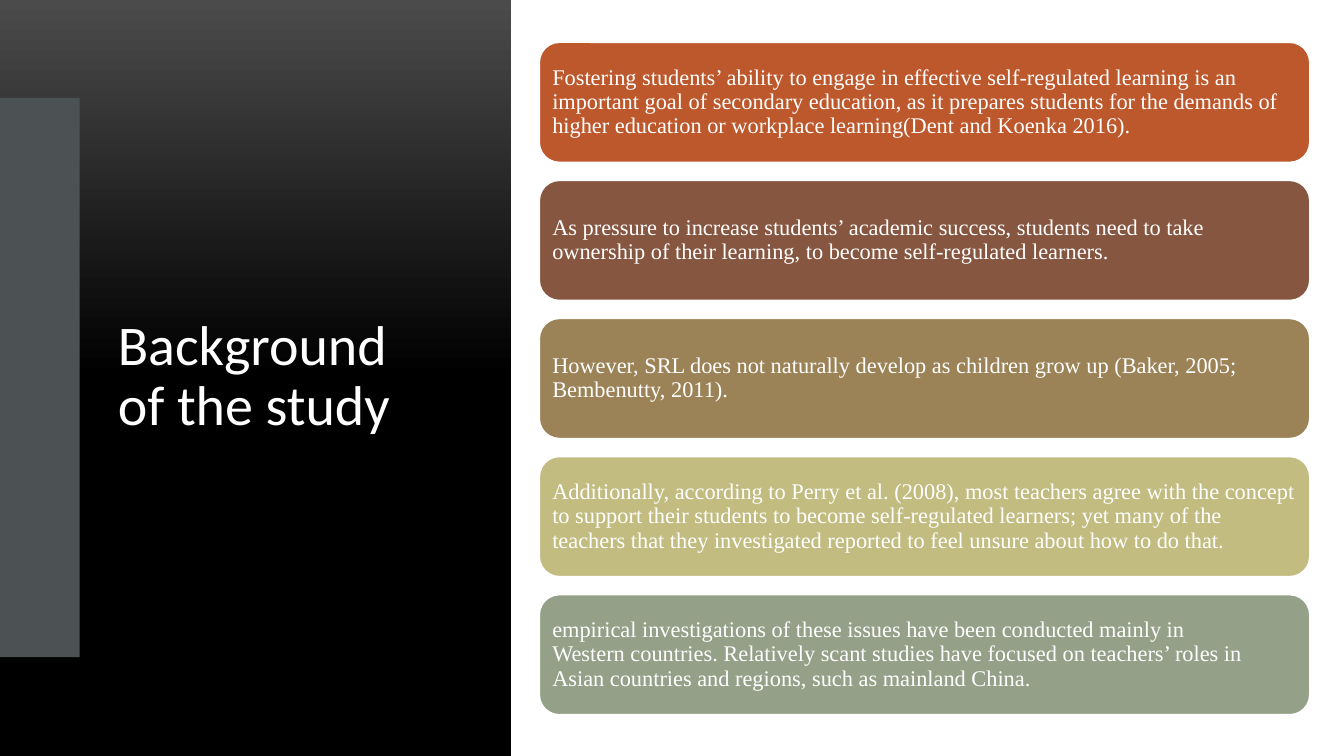
from copy import deepcopy
from dataclasses import dataclass

from pptx import Presentation
from pptx.dml.color import RGBColor
from pptx.enum.shapes import MSO_SHAPE
from pptx.enum.text import MSO_ANCHOR, PP_ALIGN
from pptx.oxml.ns import qn
from pptx.util import Inches, Pt

COLORS = {
    "white": "FFFFFF",
    "charcoal": "4B4B4B",
    "black": "000000",
    "slate": "4C5254",
    "rust": "BD582C",
    "brown": "865640",
    "tan": "9B8357",
    "olive": "C2BC80",
    "sage": "94A088",
}
CARD_LEFT, CARD_TOP = 5.35, 0.42
CARD_WIDTH, CARD_HEIGHT = 7.64, 1.19
CARD_STEP = 1.37
CARD_INSET = 0.07


@dataclass
class Card:
    color: str
    lines: tuple[str, ...]


CARDS = [
    Card("rust", (
        "Fostering students’ ability to engage in effective self-regulated learning is an "
        "important goal of secondary education, as it prepares students for the demands of "
        "higher education or workplace learning(Dent and Koenka 2016).",
    )),
    Card("brown", (
        "As pressure to increase students’ academic success, students need to take "
        "ownership of their learning, to become self-regulated learners.",
    )),
    Card("tan", (
        "However, SRL does not naturally develop as children grow up (Baker, 2005; "
        "Bembenutty, 2011).",
    )),
    Card("olive", (
        "Additionally, according to Perry et al. (2008), most teachers agree with the concept "
        "to support their students to become self-regulated learners; yet many of the "
        "teachers that they investigated reported to feel unsure about how to do that.",
    )),
    Card("sage", (
        "empirical investigations of these issues have been conducted mainly in",
        "Western countries. Relatively scant studies have focused on teachers’ roles in "
        "Asian countries and regions, such as mainland China.",
    )),
]


def rgb(name: str) -> RGBColor:
    return RGBColor.from_string(COLORS[name])


def add_block(s, kind: MSO_SHAPE, left: float, top: float, width: float, height: float,
              color: str):
    sp = s.shapes.add_shape(kind, Inches(left), Inches(top), Inches(width), Inches(height))
    sp.shadow.inherit = False
    sp.fill.solid()
    sp.fill.fore_color.rgb = rgb(color)
    sp.line.fill.background()
    return sp


def write_text(sp, lines: tuple[str, ...], font: str, size: float) -> None:
    tf = sp.text_frame
    tf.word_wrap = True
    tf.vertical_anchor = MSO_ANCHOR.MIDDLE
    p = tf.paragraphs[0]
    p.alignment = PP_ALIGN.LEFT
    p.line_spacing = 0.9
    for i, line in enumerate(lines):
        if i:
            p.add_line_break()
        r = p.add_run()
        r.text = line
        r.font.name = font
        r.font.size = Pt(size)
        r.font.color.rgb = rgb("white")


def add_panel(s) -> None:
    sp = add_block(s, MSO_SHAPE.RECTANGLE, 0, 0, 5.07, 7.5, "black")
    sp.fill.gradient()
    sp.fill.gradient_angle = 270
    top, middle = sp.fill.gradient_stops
    top.position, top.color.rgb = 0, rgb("charcoal")
    middle.position, middle.color.rgb = 0.5, rgb("black")
    stops = sp._element.spPr.find(qn("a:gradFill")).find(qn("a:gsLst"))
    stops.append(deepcopy(stops[-1]))
    sp.fill.gradient_stops[2].position = 1


def add_title(s) -> None:
    sp = s.shapes.add_textbox(Inches(1.07), Inches(0.97), Inches(3.43), Inches(5.55))
    write_text(sp, ("Background of the study",), "Calibri", 40)


def add_card(s, card: Card, index: int) -> None:
    sp = add_block(s, MSO_SHAPE.ROUNDED_RECTANGLE, CARD_LEFT, CARD_TOP + index * CARD_STEP,
                   CARD_WIDTH, CARD_HEIGHT, card.color)
    sp.line.color.rgb = rgb("white")
    sp.line.width = Pt(1)
    tf = sp.text_frame
    tf.margin_left = tf.margin_right = Inches(CARD_INSET)
    tf.margin_top = tf.margin_bottom = Inches(CARD_INSET)
    write_text(sp, card.lines, "Times New Roman", 16)


def main() -> None:
    prs = Presentation()
    prs.slide_width, prs.slide_height = Inches(13.33), Inches(7.5)
    s = prs.slides.add_slide(prs.slide_layouts[6])
    add_panel(s)
    add_title(s)
    add_block(s, MSO_SHAPE.RECTANGLE, 0, 0.97, 0.79, 5.55, "slate")
    for i, card in enumerate(CARDS):
        add_card(s, card, i)
    prs.save("out.pptx")


if __name__ == "__main__":
    main()
